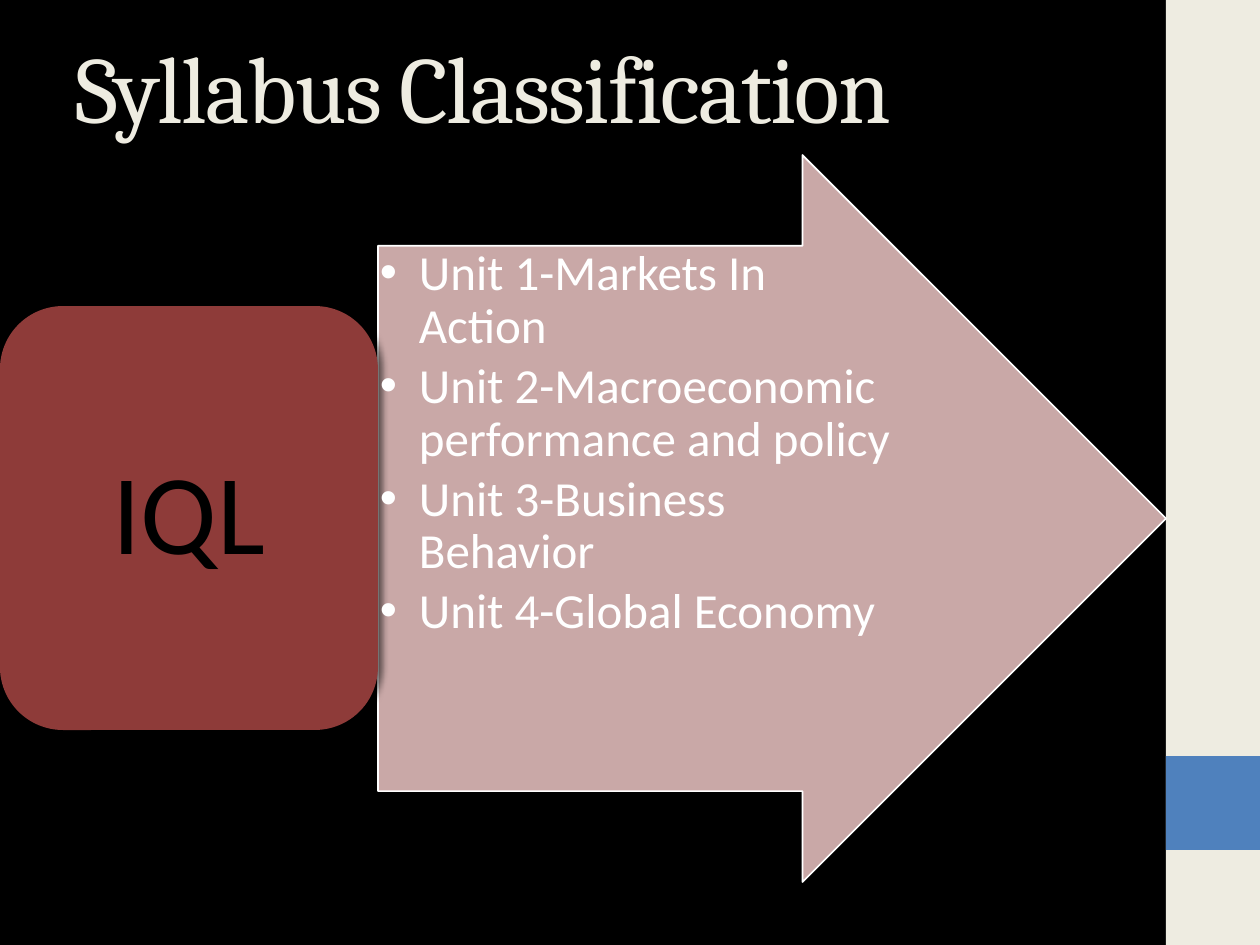
from lxml.etree import SubElement
from pptx import Presentation
from pptx.dml.color import RGBColor
from pptx.enum.shapes import MSO_SHAPE
from pptx.enum.text import MSO_ANCHOR, MSO_AUTO_SIZE, PP_ALIGN
from pptx.oxml import parse_xml
from pptx.oxml.ns import nsdecls, qn
from pptx.util import Pt

PX = 914400 / 126


def box(*lengths):
    return [round(length * PX) for length in lengths]


def paint(color_format, color):
    color_format.rgb = RGBColor.from_string(color)


prs = Presentation()
prs.slide_width, prs.slide_height = box(1260, 945)
slide = prs.slides.add_slide(prs.slide_layouts[5])
slide.background.fill.solid()
paint(slide.background.fill.fore_color, "000000")

heading = slide.shapes.title
heading.left, heading.top, heading.width, heading.height = box(63, 16, 1113, 139)
heading.text_frame.auto_size = MSO_AUTO_SIZE.NONE
heading.text_frame.vertical_anchor = MSO_ANCHOR.MIDDLE
heading_line = heading.text_frame.paragraphs[0]
heading_line.alignment = PP_ALIGN.LEFT
heading_run = heading_line.add_run()
heading_run.text = "Syllabus Classification"
heading_run.font.size = Pt(54)
heading_run.font.name = "Cambria"
paint(heading_run.font.color, "EEECE1")
heading_run.font._element.set("spc", "-100")

parts = []
for preset, place, color in [
    (MSO_SHAPE.RECTANGLE, (1166, 0, 94, 945), "EEECE1"),
    (MSO_SHAPE.RECTANGLE, (1166, 756, 94, 94), "4F81BD"),
    (MSO_SHAPE.RIGHT_ARROW, (378, 155, 788, 727), "DFBBBA"),
    (MSO_SHAPE.ROUNDED_RECTANGLE, (0, 306, 378, 424), "8E3B39"),
]:
    part = slide.shapes.add_shape(preset, *box(*place))
    part.shadow.inherit = False
    part.fill.solid()
    paint(part.fill.fore_color, color)
    part.line.fill.background()
    parts.append(part)
sidebar, accent, units_arrow, course = parts

units_arrow.adjustments[0] = 0.75
units_arrow.adjustments[1] = 0.5
units_arrow.line.width = Pt(1)
paint(units_arrow.line.color, "FFFFFF")
arrow_color = units_arrow._element.spPr.find(qn("a:solidFill"))[0]
SubElement(arrow_color, qn("a:alpha"), val="90000")

course_effects = course._element.spPr.find(qn("a:effectLst"))
course_effects.append(parse_xml(
    f'<a:outerShdw {nsdecls("a")} blurRad="50800" dist="25400" dir="0" rotWithShape="0">'
    '<a:srgbClr val="000000"><a:alpha val="60000"/></a:srgbClr></a:outerShdw>'))
course.text_frame.vertical_anchor = MSO_ANCHOR.MIDDLE
course_line = course.text_frame.paragraphs[0]
course_line.alignment = PP_ALIGN.CENTER
course_line.line_spacing = 0.9
course_run = course_line.add_run()
course_run.text = "IQL"
course_run.font.size = Pt(65)
course_run.font.name = "Calibri"
paint(course_run.font.color, "000000")

units = slide.shapes.add_textbox(*box(378, 246, 515, 545)).text_frame
units.word_wrap = True
units.margin_left, units.margin_top, units.margin_right, units.margin_bottom = box(2, 2, 2, 2)
hang, = box(39)
for index, unit in enumerate([
    "Unit 1-Markets In Action",
    "Unit 2-Macroeconomic performance and policy",
    "Unit 3-Business Behavior",
    "Unit 4-Global Economy",
]):
    unit_line = units.add_paragraph() if index else units.paragraphs[0]
    unit_line.line_spacing = 0.9
    unit_line.space_after = Pt(4)
    properties = unit_line._p.get_or_add_pPr()
    properties.set("marL", str(hang))
    properties.set("indent", str(-hang))
    SubElement(properties, qn("a:buFont"), typeface="Arial")
    SubElement(properties, qn("a:buChar"), char="•")
    unit_run = unit_line.add_run()
    unit_run.text = unit
    unit_run.font.size = Pt(28)
    unit_run.font.name = "Calibri"
    paint(unit_run.font.color, "FFFFFF")

prs.save("out.pptx")
